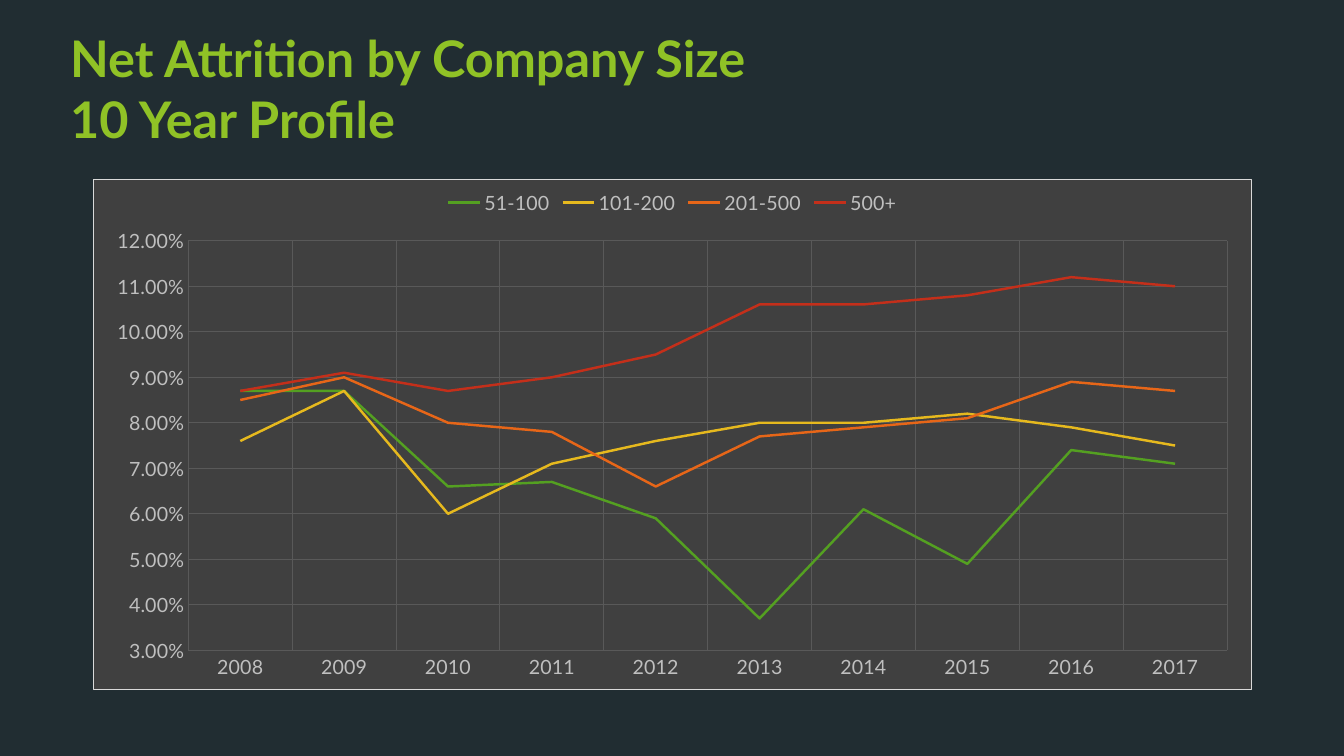
from pptx import Presentation
from pptx.chart.data import CategoryChartData
from pptx.dml.color import RGBColor
from pptx.enum.chart import XL_CHART_TYPE, XL_LEGEND_POSITION, XL_TICK_MARK
from pptx.enum.text import MSO_ANCHOR
from pptx.oxml import parse_xml
from pptx.oxml.ns import nsdecls, qn
from pptx.util import Cm, Pt

LINE_CHART = XL_CHART_TYPE.LINE
LEGEND_TOP = XL_LEGEND_POSITION.TOP
NO_TICK = XL_TICK_MARK.NONE
ANCHOR_TOP = MSO_ANCHOR.TOP

NAVY = RGBColor(0x21, 0x2D, 0x32)
LIME = RGBColor(0x90, 0xC2, 0x26)
CHARCOAL = RGBColor(0x40, 0x40, 0x40)
GRID_GRAY = RGBColor(0x59, 0x59, 0x59)
LABEL_GRAY = RGBColor(0xBF, 0xBF, 0xBF)
BORDER_GRAY = RGBColor(0xD9, 0xD9, 0xD9)
GREEN = RGBColor(0x54, 0xA0, 0x21)
YELLOW = RGBColor(0xE6, 0xB9, 0x1E)
ORANGE = RGBColor(0xE7, 0x66, 0x18)
RED = RGBColor(0xC4, 0x2F, 0x1A)

YEARS = [str(year) for year in range(2008, 2018)]
ATTRITION = [
    ("51-100", GREEN,
     (0.087, 0.087, 0.066, 0.067, 0.059, 0.037, 0.061, 0.049, 0.074, 0.071)),
    ("101-200", YELLOW,
     (0.076, 0.087, 0.06, 0.071, 0.076, 0.08, 0.08, 0.082, 0.079, 0.075)),
    ("201-500", ORANGE,
     (0.085, 0.09, 0.08, 0.078, 0.066, 0.077, 0.079, 0.081, 0.089, 0.087)),
    ("500+", RED,
     (0.087, 0.091, 0.087, 0.09, 0.095, 0.106, 0.106, 0.108, 0.112, 0.11)),
]


class SlideBuilder:
    """Holds the text style and the current slide."""

    def __init__(self, page, typeface="Lato"):
        self.page = page
        self.typeface = typeface

    def style_font(self, font, size, color, bold=False):
        font.name = self.typeface
        font.size = Pt(size)
        font.bold = bold
        font.color.rgb = color

    def background(self, color):
        fill = self.page.background.fill
        fill.solid()
        fill.fore_color.rgb = color

    def title(self, text, left, top, width, height):
        box = self.page.shapes.add_textbox(Cm(left), Cm(top), Cm(width), Cm(height))
        frame = box.text_frame
        frame.word_wrap = True
        frame.vertical_anchor = ANCHOR_TOP
        para = frame.paragraphs[0]
        para.text = text
        for span in para.runs:
            self.style_font(span.font, 36, LIME, bold=True)

    def line_chart(self, categories, series_rows, left, top, width, height):
        data = CategoryChartData(number_format="0.00%")
        data.categories = categories
        for name, _, values in series_rows:
            data.add_series(name, values)
        chart = self.page.shapes.add_chart(
            LINE_CHART, Cm(left), Cm(top), Cm(width), Cm(height), data).chart
        chart.has_title = False
        self.style_font(chart.font, 14, LABEL_GRAY)

        # Legend
        chart.has_legend = True
        chart.legend.position = LEGEND_TOP
        chart.legend.include_in_layout = False
        self.style_font(chart.legend.font, 14, LABEL_GRAY)

        # Axes and grid
        for axis in (chart.category_axis, chart.value_axis):
            self.style_axis(axis)
        chart.value_axis.minimum_scale = 0.03
        chart.value_axis.maximum_scale = 0.12
        chart.value_axis.major_unit = 0.01
        chart.value_axis.tick_labels.number_format = "0.00%"
        chart.value_axis.tick_labels.number_format_is_linked = False

        # Series lines
        chart.plots[0].vary_by_categories = False
        for series, (_, color, _) in zip(chart.plots[0].series, series_rows):
            series.smooth = False
            series.format.line.color.rgb = color
            series.format.line.width = Pt(1.75)

        self.frame_chart(chart)
        self.place_plot(chart, x=0.082, y=0.121, w=0.897, h=0.803)

    def style_axis(self, axis):
        axis.major_tick_mark = axis.minor_tick_mark = NO_TICK
        axis.format.line.fill.background()
        axis.has_major_gridlines = True
        grid = axis.major_gridlines.format.line
        grid.color.rgb = GRID_GRAY
        grid.width = Pt(0.75)
        self.style_font(axis.tick_labels.font, 14, LABEL_GRAY)

    def frame_chart(self, chart):
        """Fill and outline the chart area, with square corners."""
        space = chart.element
        if space.find(qn("c:roundedCorners")) is None:
            space.find(qn("c:date1904")).addnext(parse_xml(
                f'<c:roundedCorners {nsdecls("c")} val="0"/>'))
        space.find(qn("c:chart")).addnext(parse_xml(
            f'<c:spPr {nsdecls("c", "a")}>'
            f'<a:solidFill><a:srgbClr val="{CHARCOAL}"/></a:solidFill>'
            f'<a:ln w="{Pt(0.75)}"><a:solidFill><a:srgbClr val="{BORDER_GRAY}"/>'
            '</a:solidFill></a:ln></c:spPr>'))

    def place_plot(self, chart, **fractions):
        """Fix the inner plot area as fractions of the chart area."""
        plot_area = chart.element.find(qn("c:chart")).find(qn("c:plotArea"))
        for layout in plot_area.findall(qn("c:layout")):
            plot_area.remove(layout)
        sizes = "".join(f'<c:{key} val="{value}"/>' for key, value in fractions.items())
        plot_area.insert(0, parse_xml(
            f'<c:layout {nsdecls("c")}><c:manualLayout><c:layoutTarget val="inner"/>'
            f'<c:xMode val="edge"/><c:yMode val="edge"/>{sizes}'
            '</c:manualLayout></c:layout>'))


def main():
    deck = Presentation()
    deck.slide_width, deck.slide_height = Cm(33.87), Cm(19.05)
    builder = SlideBuilder(deck.slides.add_slide(deck.slide_layouts[6]))
    builder.background(NAVY)
    builder.title("Net Attrition by Company Size\v10 Year Profile",
                  1.52, 0.56, 31.39, 4.5)
    builder.line_chart(YEARS, ATTRITION, 2.34, 4.5, 29.21, 12.88)
    deck.save("out.pptx")


if __name__ == "__main__":
    main()
